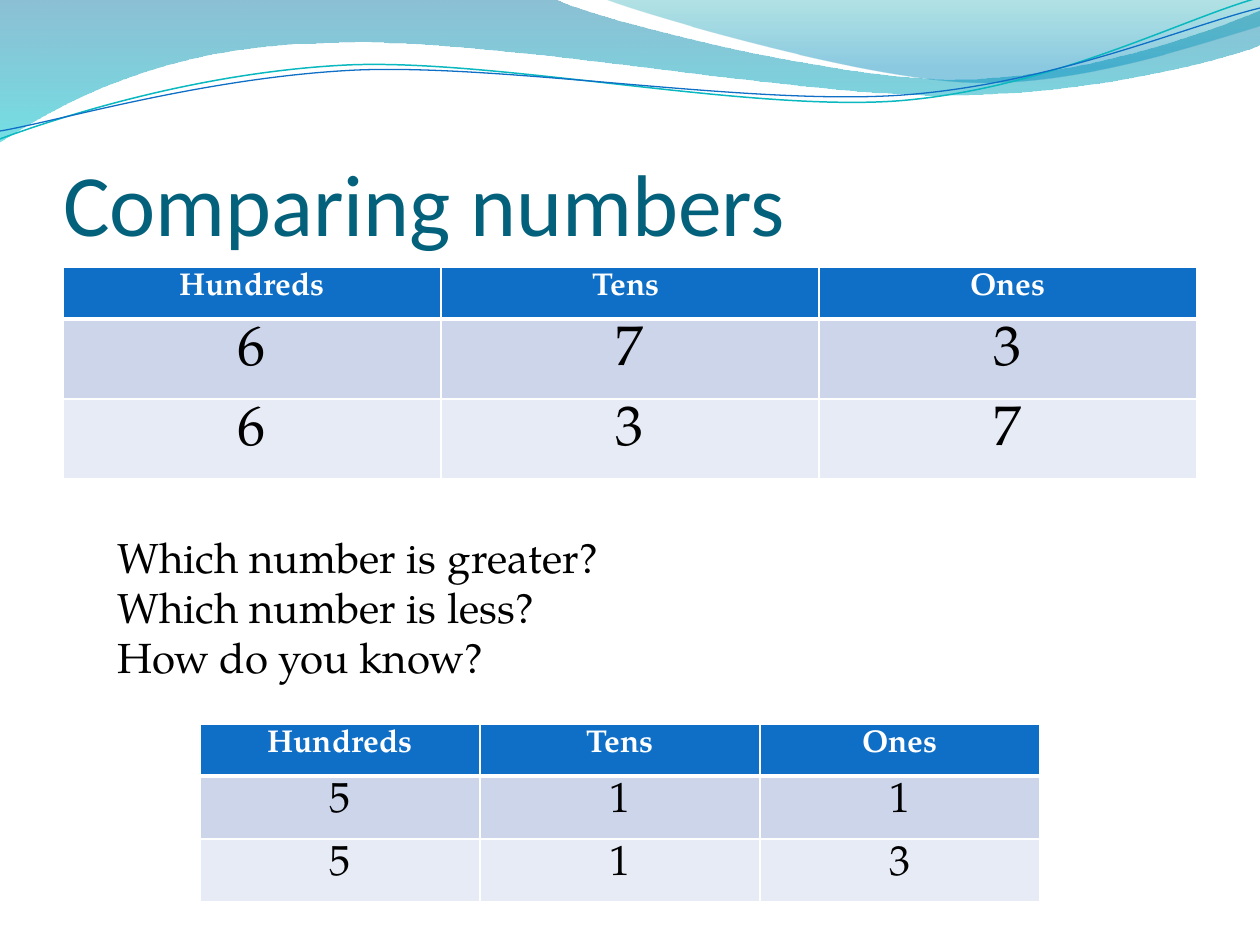
from math import cos, radians, sin
from typing import NamedTuple

from lxml.etree import SubElement
from pptx import Presentation
from pptx.dml.color import RGBColor
from pptx.enum.text import MSO_ANCHOR as Anchor, MSO_AUTO_SIZE as AutoSize, PP_ALIGN as Align
from pptx.oxml.ns import qn
from pptx.util import Emu, Pt

PX = 914400 // 126
BODY_FONT = "TeX Gyre Pagella"
WHITE, BLACK, BLUE, TEAL = "FFFFFF", "000000", "0F6FC6", "0AB8BF"
ROW_FILLS = (BLUE, "CCD5EA", "E7EBF5")
ROW_HEIGHT = 52
TILT = -2.7

Point = tuple[float, float]


class Stop(NamedTuple):
    position: float
    color: str
    opacity: int


class Wave(NamedTuple):
    """Each segment holds one point for a line or three for a Bézier curve."""
    start: Point
    segments: list[tuple[Point, ...]]
    stops: tuple[Stop, ...] = ()
    line_color: str = ""
    line_width: float = 0
    tilt: float = 0
    pivot: Point = (0, 0)


class PlaceValueTable(NamedTuple):
    left: int
    top: int
    column_width: int
    height: int
    digit_size: int
    rows: tuple[tuple[str, str, str], ...]


WAVES = [
    Wave((0, 0), [((554, -1),),
                  ((600, 21), (837, 79), (955, 79)),
                  ((1075, 79), (1207, 33), (1260, 11)),
                  ((1261, 45),),
                  ((1239, 55), (1096, 96), (940, 95)),
                  ((784, 95), (481, 35), (324, 43)),
                  ((163, 45), (58, 105), (-1, 142)),
                  ((0, 0),)],
         stops=(Stop(0, "0074A1", 45), Stop(1, "00C6CF", 55))),
    Wave((604, -1), [((641, 14), (859, 78), (969, 82)),
                     ((1079, 87), (1211, 40), (1260, 26)),
                     ((1260, 0),),
                     ((604, -1),)],
         stops=(Stop(0, "00A1A9", 30), Stop(0.8, "008BBF", 45))),
    Wave((0, 139), [((60, 117), (199, 72), (349, 65)),
                    ((498, 59), (747, 112), (898, 101)),
                    ((1050, 89), (1182, 19), (1258, -2))],
         line_color=TEAL, line_width=0.85, tilt=TILT, pivot=(629, 72)),
    Wave((0, 131), [((59, 121), (207, 77), (357, 70)),
                    ((508, 64), (752, 106), (903, 95)),
                    ((1053, 84), (1186, 26), (1260, 8))],
         line_color=BLUE, line_width=0.75, tilt=TILT, pivot=(629, 74)),
]
TABLES = [
    PlaceValueTable(63, 267, 378, 210, 32,
                    (("Hundreds", "Tens ", "Ones"), ("6", "7", "3"), ("6", "3", "7"))),
    PlaceValueTable(200, 724, 280, 177, 24,
                    (("Hundreds", "Tens", "Ones"), ("5", "1", "1"), ("5", "1", "3"))),
]
QUESTIONS = ("Which number is greater?", "Which number is less?", "How do you know?")


def px(length: float) -> Emu:
    return Emu(round(length * PX))


def rgb(color: str) -> RGBColor:
    return RGBColor.from_string(color)


def write(frame, *lines: str, size: int, color: str = BLACK, font: str = BODY_FONT,
          bold: bool = False, align: Align = Align.LEFT) -> None:
    for index, line in enumerate(lines):
        paragraph = frame.paragraphs[0] if index == 0 else frame.add_paragraph()
        paragraph.alignment = align
        run = paragraph.add_run()
        run.text = line
        run.font.name, run.font.size, run.font.bold = font, Pt(size), bold
        run.font.color.rgb = rgb(color)


def untilt(point: Point, wave: Wave) -> tuple[Emu, Emu]:
    """Give the point's place before the shape is rotated by the wave's tilt."""
    angle = radians(-wave.tilt)
    dx, dy = point[0] - wave.pivot[0], point[1] - wave.pivot[1]
    return (px(wave.pivot[0] + dx * cos(angle) - dy * sin(angle)),
            px(wave.pivot[1] + dx * sin(angle) + dy * cos(angle)))


def build_curves(shapes, wave: Wave):
    """Build the outline from its joints, then bend the curved segments."""
    builder = shapes.build_freeform(*untilt(wave.start, wave))
    builder.add_line_segments([untilt(segment[-1], wave) for segment in wave.segments],
                              close=bool(wave.stops))
    shape = builder.convert_to_shape()
    lines = list(shape._element.spPr.iter(qn("a:lnTo")))
    for line, segment in zip(lines, wave.segments):
        if len(segment) == 3:
            line.tag = qn("a:cubicBezTo")
            for index, control in enumerate(segment[:2]):
                x, y = untilt(control, wave)
                line.insert(index, line.makeelement(
                    qn("a:pt"), {"x": str(x - shape.left), "y": str(y - shape.top)}))
    shape.rotation = wave.tilt
    return shape


def draw_wave(shapes, wave: Wave) -> None:
    shape = build_curves(shapes, wave)
    shape.shadow.inherit = False
    if not wave.stops:
        shape.fill.background()
        shape.line.color.rgb = rgb(wave.line_color)
        shape.line.width = Pt(wave.line_width)
        return
    shape.line.fill.background()
    shape.fill.gradient()
    shape.fill.gradient_angle = 270
    for target, stop in zip(shape.fill.gradient_stops, wave.stops):
        target.position = stop.position
        target.color.rgb = rgb(stop.color)
    for color, stop in zip(shape._element.spPr.iter(qn("a:srgbClr")), wave.stops):
        SubElement(color, qn("a:alpha"), val=str(stop.opacity * 1000))


def add_borders(cell, row: int) -> None:
    """White rules, with a thicker one between the header and the digits."""
    widths = {"L": 1, "R": 1, "T": 3 if row == 1 else 1, "B": 3 if row == 0 else 1}
    properties = cell._tc.get_or_add_tcPr()
    for side, width in widths.items():
        border = SubElement(properties, qn(f"a:ln{side}"), w=str(Pt(width)))
        fill = SubElement(border, qn("a:solidFill"))
        SubElement(fill, qn("a:srgbClr"), val=WHITE)


def draw_table(shapes, places: PlaceValueTable) -> None:
    frame = shapes.add_table(3, 3, px(places.left), px(places.top),
                             px(3 * places.column_width), px(places.height))
    table = frame.table
    for column in table.columns:
        column.width = px(places.column_width)
    for row, entries in enumerate(places.rows):
        table.rows[row].height = px(ROW_HEIGHT)
        header = row == 0
        for column, entry in enumerate(entries):
            cell = table.cell(row, column)
            add_borders(cell, row)
            cell.fill.solid()
            cell.fill.fore_color.rgb = rgb(ROW_FILLS[row])
            write(cell.text_frame, entry, size=18 if header else places.digit_size,
                  color=WHITE if header else BLACK, bold=header, align=Align.CENTER)
    frame.height = px(places.height)


def main() -> None:
    deck = Presentation()
    deck.slide_width, deck.slide_height = px(1260), px(945)
    slide = deck.slides.add_slide(deck.slide_layouts[5])
    shapes = slide.shapes
    for wave in WAVES:
        draw_wave(shapes, wave)

    title = shapes.title
    title.left, title.top, title.width, title.height = px(63), px(97), px(1134), px(157)
    heading = title.text_frame
    heading.margin_left = heading.margin_right = heading.margin_bottom = 0
    heading.vertical_anchor = Anchor.BOTTOM
    heading.auto_size = AutoSize.NONE
    write(heading, "Comparing numbers", size=50, color="04617B", font="Calibri")

    questions = shapes.add_textbox(px(105), px(525), px(1029), px(165)).text_frame
    questions.word_wrap = True
    questions.auto_size = AutoSize.SHAPE_TO_FIT_TEXT
    write(questions, *QUESTIONS, size=24)

    for table in TABLES:
        draw_table(shapes, table)
    deck.save("out.pptx")


if __name__ == "__main__":
    main()
